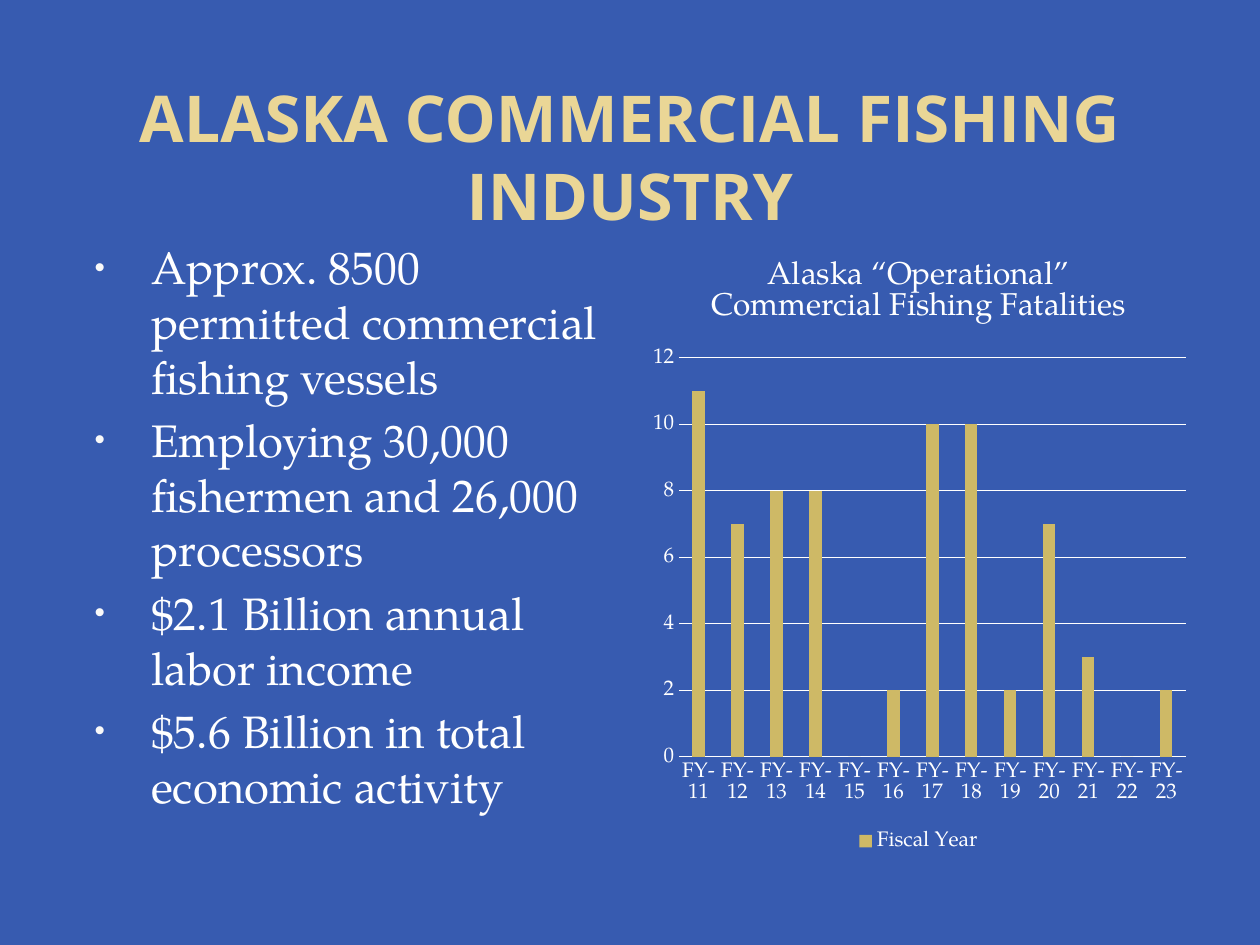
from lxml import etree
from pptx import Presentation
from pptx import util as u
from pptx.chart.data import CategoryChartData
from pptx.dml.color import RGBColor
from pptx.enum import chart as ch, text
from pptx.oxml import parse_xml
from pptx.oxml.ns import nsdecls, qn

BLUE = RGBColor(0x37, 0x5B, 0xB0)
SAND = RGBColor(0xEA, 0xD6, 0x96)
GOLD = RGBColor(0xCE, 0xB9, 0x66)
WHITE = RGBColor(0xFF, 0xFF, 0xFF)
HEAD_FONT = "Open Sans"
BODY_FONT = "TeX Gyre Pagella"

BULLETS = [
    "Approx. 8500 permitted commercial fishing vessels",
    "Employing 30,000 fishermen and 26,000 processors",
    "$2.1 Billion annual labor income",
    "$5.6 Billion in total economic activity",
]
FATALITIES = [11, 7, 8, 8, 0, 2, 10, 10, 2, 7, 3, 0, 2]
FIRST_YEAR = 11


def set_font(font, size, color=WHITE, name=BODY_FONT, bold=False):
    font.size, font.name, font.bold = u.Pt(size), name, bold
    font.color.rgb = color


def add_text(p, content, **fmt):
    r = p.add_run()
    r.text = content
    set_font(r.font, **fmt)


def place(sp, left, top, width, height):
    sp.left, sp.top = u.Inches(left), u.Inches(top)
    sp.width, sp.height = u.Inches(width), u.Inches(height)


def add_bullet(p):
    pPr = p._p.get_or_add_pPr()
    pPr.set("marL", str(u.Inches(0.6)))
    pPr.set("indent", str(u.Inches(-0.45)))
    color = etree.SubElement(pPr, qn("a:buClr"))
    etree.SubElement(color, qn("a:srgbClr"), val="F9F9F9")
    etree.SubElement(pPr, qn("a:buSzPct"), val="65000")
    etree.SubElement(pPr, qn("a:buChar"), char="•")


def fill_title(sp):
    place(sp, 0.5, 0.3, 9, 1.25)
    tf = sp.text_frame
    tf.auto_size = text.MSO_AUTO_SIZE.NONE
    tf.vertical_anchor = text.MSO_ANCHOR.MIDDLE
    tf.margin_top = u.Inches(0.67)  # sets the heading low in its box
    p = tf.paragraphs[0]
    p.alignment = text.PP_ALIGN.CENTER
    add_text(p, "ALASKA COMMERCIAL FISHING INDUSTRY",
             size=36.9, color=SAND, name=HEAD_FONT, bold=True)


def fill_body(sp):
    place(sp, 0.5, 1.85, 4.42, 4.95)
    tf = sp.text_frame
    tf.auto_size = text.MSO_AUTO_SIZE.NONE
    for i, line in enumerate(BULLETS):
        p = tf.paragraphs[0] if i == 0 else tf.add_paragraph()
        add_bullet(p)
        p.space_before = u.Pt(5.2 if i else 0)
        add_text(p, line, size=26)


def set_plot_layout(chart, **box):
    area = chart._chartSpace.chart.plotArea
    for old in area.findall(qn("c:layout")):
        area.remove(old)
    sizes = "".join(f'<c:{k} val="{v}"/>' for k, v in box.items())
    area.insert(0, parse_xml(
        f'<c:layout {nsdecls("c")}><c:manualLayout>'
        '<c:layoutTarget val="inner"/><c:xMode val="edge"/>'
        f'<c:yMode val="edge"/>{sizes}</c:manualLayout></c:layout>'))


def style_axis(axis):
    axis.major_tick_mark = axis.minor_tick_mark = ch.XL_TICK_MARK.NONE
    set_font(axis.tick_labels.font, 12)


def add_fatalities_chart(s):
    data = CategoryChartData()
    data.categories = [f"FY-{FIRST_YEAR + i}" for i in range(len(FATALITIES))]
    data.add_series("Fiscal Year", FATALITIES)
    box = [u.Inches(v) for v in (5.08, 1.85, 4.42, 4.95)]
    chart = s.shapes.add_chart(
        ch.XL_CHART_TYPE.COLUMN_CLUSTERED, *box, data).chart
    set_font(chart.font, 10)

    # Title and legend
    chart.has_title = True
    add_text(chart.chart_title.text_frame.paragraphs[0],
             "Alaska “Operational” Commercial Fishing Fatalities", size=18)
    chart.chart_title.include_in_layout = False
    chart.has_legend = True
    chart.legend.position = ch.XL_LEGEND_POSITION.BOTTOM
    chart.legend.include_in_layout = False
    set_font(chart.legend.font, 12)

    # Columns
    plot = chart.plots[0]
    plot.vary_by_categories = False
    plot.gap_width, plot.overlap = 219, -27
    fill = plot.series[0].format.fill
    fill.solid()
    fill.fore_color.rgb = GOLD

    # Axes and gridlines
    cat, val = chart.category_axis, chart.value_axis
    style_axis(cat)
    style_axis(val)
    val.minimum_scale, val.maximum_scale, val.major_unit = 0, 12, 2
    val.format.line.fill.background()
    val.has_major_gridlines = True
    for line in (cat.format.line, val.major_gridlines.format.line):
        line.width = u.Pt(0.75)
        line.color.rgb = WHITE
    set_plot_layout(chart, x=0.07, y=0.2, w=0.91, h=0.64)


def main():
    prs = Presentation()
    prs.slide_width, prs.slide_height = u.Inches(10), u.Inches(7.5)
    s = prs.slides.add_slide(prs.slide_layouts[1])
    s.background.fill.solid()
    s.background.fill.fore_color.rgb = BLUE
    fill_title(s.shapes.title)
    fill_body(s.placeholders[1])
    add_fatalities_chart(s)
    prs.save("out.pptx")


if __name__ == "__main__":
    main()
